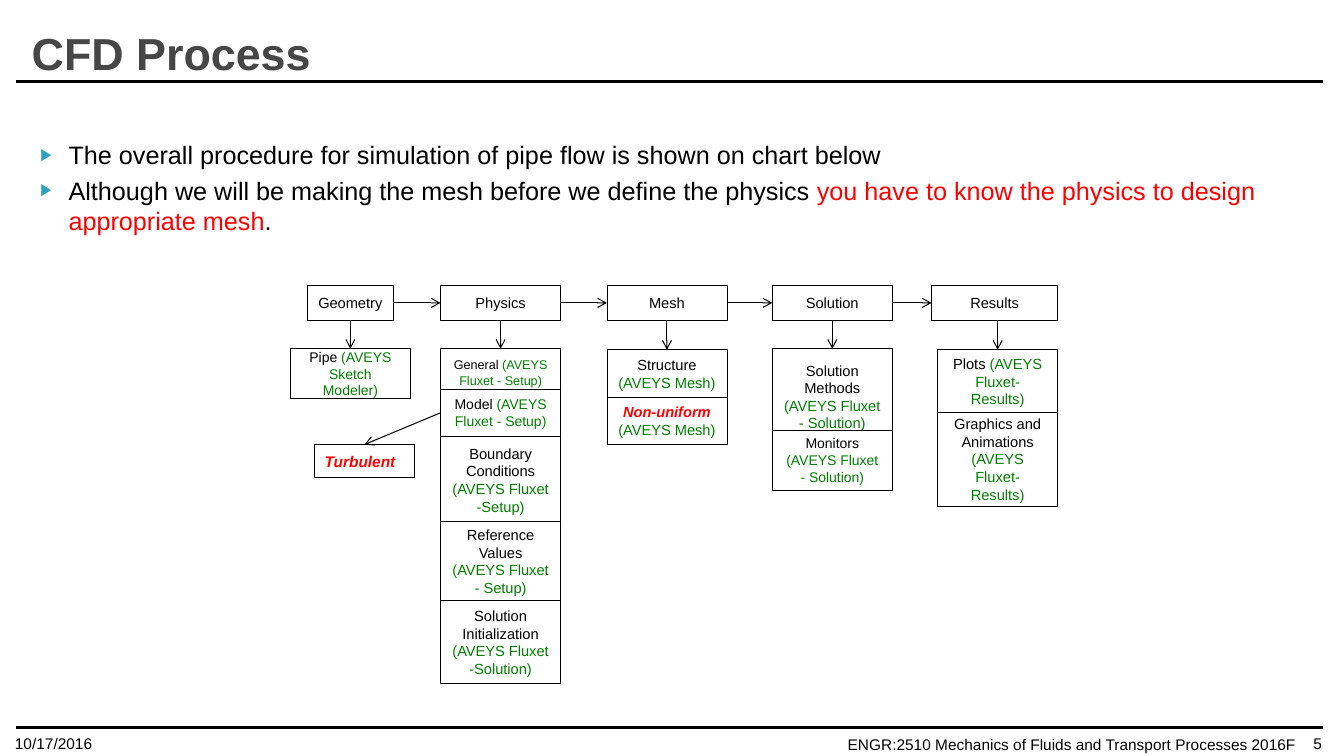
from pptx import Presentation
from pptx.dml.color import RGBColor
from pptx.enum.shapes import MSO_CONNECTOR, MSO_SHAPE
from pptx.enum.text import MSO_ANCHOR, MSO_AUTO_SIZE, PP_ALIGN
from pptx.oxml.ns import qn
from pptx.util import Inches, Pt
from lxml.etree import SubElement

BLACK = RGBColor(0, 0, 0)
WHITE = RGBColor(255, 255, 255)
GRAY = RGBColor(0x46, 0x46, 0x46)
RED = RGBColor(255, 0, 0)
GREEN = RGBColor(0, 0x80, 0)
BULLET_COLOR = "2DA2BF"

TOP, LEFT, BOTTOM, RIGHT = range(4)
HEADER_TOP, HEADER_HEIGHT, STEP_WIDTH = 2.83, 0.35, 1.19

STAGES = [
    ("Geometry", 3.05, 0.85, 2.88, [
        (3.46, 0.49, 10, "Pipe ", "(AVEYS Sketch Modeler)")]),
    ("Physics", 4.37, 1.19, 4.37, [
        (3.46, 0.47, 9, "General ", "(AVEYS Fluxet - Setup)"),
        (3.86, 0.47, 10, "Model ", "(AVEYS Fluxet - Setup)"),
        (4.33, 0.86, 10.5, "Boundary Conditions ", "(AVEYS Fluxet -Setup)"),
        (5.17, 0.79, 10.5, "Reference Values ", "(AVEYS Fluxet - Setup)"),
        (5.96, 0.82, 10.5, "Solution Initialization ", "(AVEYS Fluxet -Solution)")]),
    ("Mesh", 6.02, 1.19, 6.02, [
        (3.47, 0.47, 10.5, "Structure ", "(AVEYS Mesh)"),
        (3.94, 0.47, 10.5, "Non-uniform ", "(AVEYS Mesh)")]),
    ("Solution", 7.66, 1.19, 7.66, [
        (3.46, 0.95, 10.5, "Solution Methods ", "(AVEYS Fluxet - Solution)"),
        (4.27, 0.59, 10, "Monitors ", "(AVEYS Fluxet - Solution)")]),
    ("Results", 9.24, 1.25, 9.3, [
        (3.47, 0.63, 10.5, "Plots ", "(AVEYS Fluxet- Results)"),
        (4.09, 0.93, 10.5, "Graphics and Animations ", "(AVEYS Fluxet- Results)")]),
]


class ProcessSlide:
    """Draws the elements of one slide in a shared style."""

    def __init__(self, page, font="Arial"):
        self.page = page
        self.font = font

    def add_spans(self, para, spans, size):
        for words, color, strong in spans:
            span = para.add_run()
            span.text = words
            span.font.name = self.font
            span.font.size = Pt(size)
            span.font.color.rgb = color
            span.font.bold = strong

    def place(self, shape, left, top, width, height):
        shape.left, shape.top = Inches(left), Inches(top)
        shape.width, shape.height = Inches(width), Inches(height)
        shape.text_frame.auto_size = MSO_AUTO_SIZE.NONE

    def title(self, words):
        shape = self.page.shapes.title
        self.place(shape, 0.11, 0.22, 3.18, 0.6)
        shape.text_frame.vertical_anchor = MSO_ANCHOR.MIDDLE
        para = shape.text_frame.paragraphs[0]
        para.alignment = PP_ALIGN.CENTER
        self.add_spans(para, [(words, GRAY, True)], 32)

    def bullets(self, items):
        shape = self.page.placeholders[1]
        self.place(shape, 0.18, 1.33, 12.82, 4.95)
        frame = shape.text_frame
        for index, spans in enumerate(items):
            para = frame.add_paragraph() if index else frame.paragraphs[0]
            para.space_before = Pt(4 if index else 0)
            props = para._p.get_or_add_pPr()
            props.set("marL", str(Inches(0.4)))
            props.set("indent", str(Inches(-0.28)))
            color = SubElement(props, qn("a:buClr"))
            SubElement(color, qn("a:srgbClr"), val=BULLET_COLOR)
            SubElement(props, qn("a:buSzPct"), val="68000")
            SubElement(props, qn("a:buFont"), typeface=self.font)
            SubElement(props, qn("a:buChar"), char="▶")
            self.add_spans(para, spans, 18)

    def label(self, words, left, top, width, height, anchor, align=PP_ALIGN.LEFT):
        shape = self.page.shapes.add_textbox(
            Inches(left), Inches(top), Inches(width), Inches(height))
        shape.text_frame.word_wrap = True
        shape.text_frame.vertical_anchor = anchor
        para = shape.text_frame.paragraphs[0]
        para.alignment = align
        self.add_spans(para, [(words, BLACK, False)], 11)

    def box(self, spans, left, top, width, height, size=10.5, align=PP_ALIGN.CENTER):
        shape = self.page.shapes.add_shape(
            MSO_SHAPE.RECTANGLE, Inches(left), Inches(top), Inches(width), Inches(height))
        shape.shadow.inherit = False
        shape.fill.solid()
        shape.fill.fore_color.rgb = WHITE
        shape.line.color.rgb = BLACK
        shape.line.width = Pt(0.5)
        shape.text_frame.word_wrap = True
        shape.text_frame.vertical_anchor = MSO_ANCHOR.MIDDLE
        para = shape.text_frame.paragraphs[0]
        para.alignment = align
        self.add_spans(para, spans, size)
        for span in para.runs:
            span.font.italic = span.font.bold
        return shape

    def line(self, start, end, weight):
        link = self.page.shapes.add_connector(MSO_CONNECTOR.STRAIGHT, *start, *end)
        link.line.color.rgb = BLACK
        link.line.width = Pt(weight)
        SubElement(link._element.spPr, qn("a:effectLst"))
        return link

    def rule(self, height):
        self.line((Inches(0.16), Inches(height)), (Inches(13.12), Inches(height)), 2.5)

    def arrow(self, source, source_side, target, target_side):
        link = self.line((0, 0), (0, 0), 0.75)
        link.begin_connect(source, source_side)
        link.end_connect(target, target_side)
        self.arrowhead(link)

    def drop(self, source, target):
        middle = target.left + target.width // 2
        if abs(source.left + source.width // 2 - middle) < Inches(0.01):
            self.arrow(source, BOTTOM, target, TOP)
        else:
            link = self.line((middle, source.top + source.height), (middle, target.top), 0.75)
            link.end_connect(target, TOP)
            self.arrowhead(link)

    def arrowhead(self, link):
        SubElement(link._element.spPr.find(qn("a:ln")), qn("a:tailEnd"), type="arrow")


def main():
    deck = Presentation()
    deck.slide_width, deck.slide_height = Inches(13.33), Inches(7.5)
    slide = ProcessSlide(deck.slides.add_slide(deck.slide_layouts[1]))

    slide.label("ENGR:2510 Mechanics of Fluids and Transport Processes 2016F",
                8.31, 7.24, 5, 0.29, MSO_ANCHOR.TOP)
    slide.rule(0.81)
    slide.rule(7.22)
    slide.title("CFD Process")
    slide.bullets([
        [("The overall procedure for simulation of pipe flow is shown on chart below",
          BLACK, False)],
        [("Although we will be making the mesh before we define the physics ", BLACK, False),
         ("you have to know the physics to design appropriate mesh", RED, False),
         (".", BLACK, False)],
    ])

    steps = {}
    previous = None
    for name, left, width, step_left, parts in STAGES:
        header = slide.box([(name, BLACK, False)], left, HEADER_TOP, width, HEADER_HEIGHT)
        if previous:
            slide.arrow(previous, RIGHT, header, LEFT)
        previous = header
        for top, height, size, step, tool in parts:
            key = step == "Non-uniform "
            spans = [(step, RED if key else BLACK, key), (tool, GREEN, False)]
            steps[step] = slide.box(spans, step_left, top, STEP_WIDTH, height, size)
        slide.drop(header, steps[parts[0][3]])

    turbulent = slide.box([("Turbulent", RED, True)], 3.12, 4.41, 0.99, 0.33, 11, PP_ALIGN.LEFT)
    slide.arrow(steps["Model "], LEFT, turbulent, TOP)

    slide.label("10/17/2016", 0.05, 7.12, 2.8, 0.4, MSO_ANCHOR.BOTTOM)
    slide.label("5", 12.68, 7.12, 0.53, 0.4, MSO_ANCHOR.BOTTOM, PP_ALIGN.RIGHT)
    deck.save("out.pptx")


if __name__ == "__main__":
    main()
